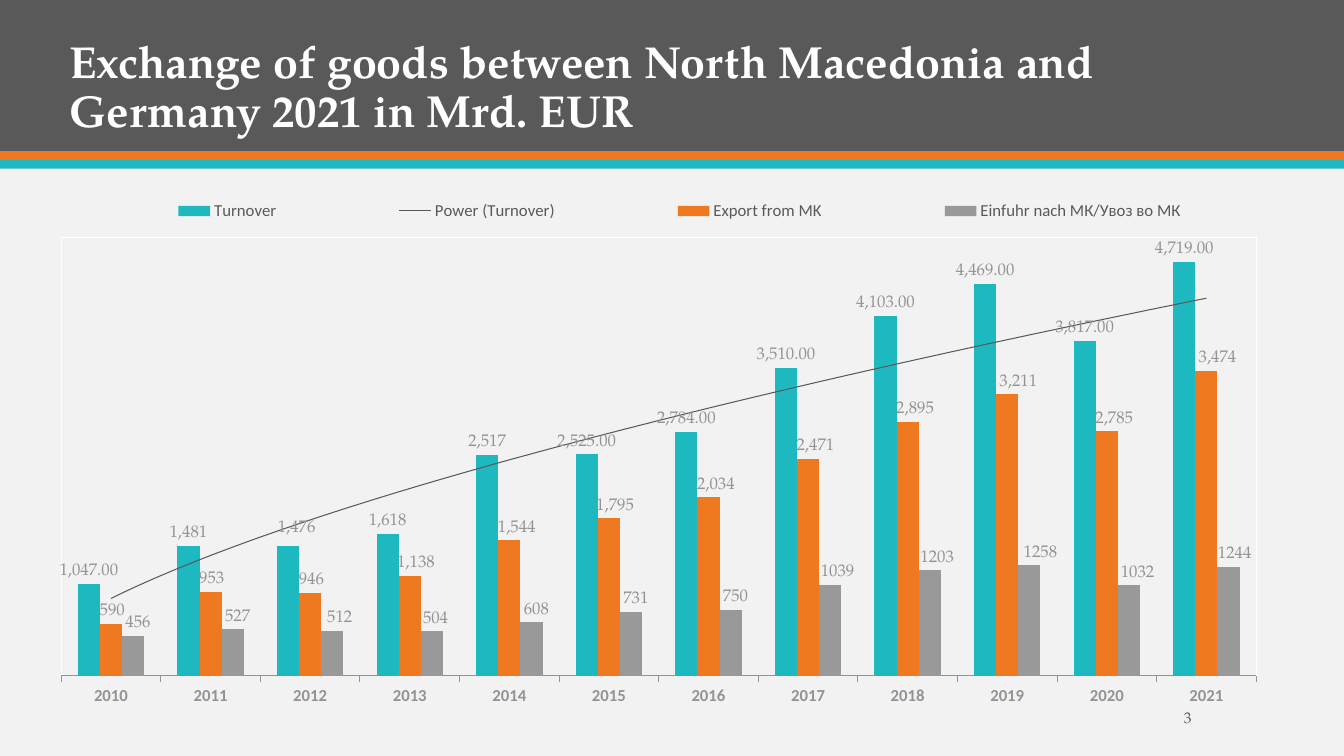
"""Build the slide on the exchange of goods between North Macedonia and Germany."""
from dataclasses import dataclass

from pptx import Presentation
from pptx.chart.data import CategoryChartData
from pptx.dml.color import RGBColor
from pptx.enum import chart as ce, shapes, text
from pptx.oxml import parse_xml
from pptx.oxml.ns import nsdecls, qn
from pptx.util import Cm, Pt

TITLE = "Exchange of goods between North Macedonia and Germany 2021 in Mrd. EUR"
PAGE = "3"
YEARS = [str(year) for year in range(2010, 2022)]
TURNOVER = dict(
    name="Turnover", color="1EB8C1", fmt="#,##0.00",
    values=[1047, 1481, 1476, 1618, 2517, 2525, 2784, 3510, 4103, 4469, 3817, 4719],
    texts={1: "1,481", 2: "1,476", 3: "1,618", 4: "2,517"},
    shifts={2: (0.7, -1)})
EXPORT = dict(
    name="Export from MK", color="EF7920", fmt="#,##0",
    values=[590, 953, 946, 1138, 1544, 1795, 2034, 2471, 2895, 3211, 2785, 3474],
    texts={4: "1,544"},
    shifts={i: (x, 0) for i, x in enumerate(
        [0.1, 0.1, 0.1, 0.5, 0.6, 0.5, 0.6, 0.6, 0.6, 0.9, 0.6, 0.9])})
IMPORT = dict(
    name="Einfuhr nach MК/Увоз во МК", color="999999", fmt="0",
    values=[456, 527, 512, 504, 608, 731, 750, 1039, 1203, 1258, 1032, 1244],
    texts={},
    shifts={i: (x, 0) for i, x in enumerate(
        [0.4, 0.4, 0.6, 0.3, 0.4, 0.4, 0.4, 0.6, 0.6, 0.9, 0.7, 0.5])})
FLOWS = [TURNOVER, EXPORT, IMPORT]


@dataclass(frozen=True)
class Theme:
    serif: str = "TeX Gyre Pagella"
    sans: str = "Calibri"
    white: str = "FFFFFF"
    back: str = "F2F2F2"
    dark: str = "595959"
    orange: str = "EF7920"
    teal: str = "1EB8C1"
    muted: str = "939393"
    title: int = 32
    chart: int = 18
    label: int = 12
    page: int = 11


T = Theme()
WIDTH, HEIGHT = 33.87, 19.05
BANDS = [(T.dark, 3.81), (T.orange, 0.22), (T.teal, 0.22)]


def rgb(color):
    return RGBColor.from_string(color)


def set_font(font, size, color, name=T.serif, bold=False):
    font.size, font.name, font.bold = Pt(size), name, bold
    font.color.rgb = rgb(color)


def write(tf, content, align=text.PP_ALIGN.LEFT, spacing=None, **style):
    p = tf.paragraphs[0]
    p.alignment, p.line_spacing = align, spacing
    r = p.add_run()
    r.text = content
    set_font(r.font, **style)


def chart_xml(tag, body):
    return parse_xml(f"<c:{tag} {nsdecls('c', 'a')}>{body}</c:{tag}>")


def layout(**settings):
    items = "".join(f'<c:{key} val="{val}"/>' for key, val in settings.items())
    return chart_xml("layout", f"<c:manualLayout>{items}</c:manualLayout>")


def replace_layout(parent, anchor, new):
    for old in parent.findall(qn("c:layout")):
        parent.remove(old)
    if anchor is None:
        parent.insert(0, new)
    else:
        anchor.addnext(new)


def add_bands(slide):
    top = 0
    for color, height in BANDS:
        sp = slide.shapes.add_shape(shapes.MSO_SHAPE.RECTANGLE, 0, Cm(top), Cm(WIDTH), Cm(height))
        sp.shadow.inherit = False
        sp.fill.solid()
        sp.fill.fore_color.rgb = rgb(color)
        sp.line.fill.background()
        top += height


def label_series(series, flow):
    style = dict(size=T.label, color=T.muted)
    labels = series.data_labels
    labels.show_value = True
    labels.number_format, labels.number_format_is_linked = flow["fmt"], False
    labels.position = ce.XL_LABEL_POSITION.OUTSIDE_END
    set_font(labels.font, **style)
    for i in sorted({*flow["texts"], *flow["shifts"]}):
        label = series.points[i].data_label
        label.position = ce.XL_LABEL_POSITION.OUTSIDE_END
        if i in flow["texts"]:
            write(label.text_frame, flow["texts"][i], align=None, **style)
        else:
            set_font(label.font, **style)
        if i in flow["shifts"]:
            x, y = flow["shifts"][i]
            idx = series._element.xpath(f"c:dLbls/c:dLbl/c:idx[@val='{i}']")[0]
            idx.addnext(layout(x=x / 100, y=y / 100))


def add_trend(series):
    series._element.find(qn("c:dLbls")).addnext(chart_xml(
        "trendline",
        f'<c:spPr><a:ln w="9525"><a:solidFill><a:srgbClr val="{T.dark}"/></a:solidFill></a:ln></c:spPr>'
        '<c:trendlineType val="power"/><c:dispRSqr val="0"/><c:dispEq val="0"/>'))


def format_axes(chart):
    years, amounts = chart.category_axis, chart.value_axis
    years.major_tick_mark = ce.XL_TICK_MARK.OUTSIDE
    years.format.line.color.rgb = rgb(T.muted)
    set_font(years.tick_labels.font, T.label, T.muted, T.sans, bold=True)
    amounts.minimum_scale, amounts.maximum_scale = 0, 5000
    amounts.has_major_gridlines = False
    amounts.tick_labels.number_format = "#,##0.00"
    amounts.tick_labels.number_format_is_linked = False
    amounts.visible = False


def format_frame(chart):
    chart.has_legend = True
    legend = chart.legend
    legend.position = ce.XL_LEGEND_POSITION.TOP
    legend.include_in_layout = False
    set_font(legend.font, T.label, T.dark, T.sans)
    legend_el = legend._element
    replace_layout(legend_el, legend_el.find(qn("c:legendPos")),
                   layout(xMode="edge", yMode="edge", x=0, y=0.01, w=1, h=0.05))
    area = chart._chartSpace.chart.plotArea
    replace_layout(area, None, layout(
        layoutTarget="inner", xMode="edge", yMode="edge", x=0, y=0.085, w=0.966, h=0.83))
    area.append(chart_xml(
        "spPr", f'<a:noFill/><a:ln w="9525"><a:solidFill><a:srgbClr val="{T.white}"/></a:solidFill></a:ln>'))


def add_trade_chart(slide):
    data = CategoryChartData()
    data.categories = YEARS
    for flow in FLOWS:
        data.add_series(flow["name"], flow["values"], flow["fmt"])
    chart = slide.shapes.add_chart(
        ce.XL_CHART_TYPE.COLUMN_CLUSTERED, Cm(1.5), Cm(4.85), Cm(31.22), Cm(13.31), data).chart
    chart.has_title = False
    set_font(chart.font, T.chart, T.dark)
    plot = chart.plots[0]
    plot.gap_width, plot.overlap, plot.vary_by_categories = 150, 0, False
    for series, flow in zip(plot.series, FLOWS):
        series.format.fill.solid()
        series.format.fill.fore_color.rgb = rgb(flow["color"])
        label_series(series, flow)
    add_trend(plot.series[0])
    format_axes(chart)
    format_frame(chart)


def main():
    prs = Presentation()
    prs.slide_width, prs.slide_height = Cm(WIDTH), Cm(HEIGHT)
    slide = prs.slides.add_slide(prs.slide_layouts[5])
    slide.background.fill.solid()
    slide.background.fill.fore_color.rgb = rgb(T.back)
    add_bands(slide)

    title = slide.shapes.title
    slide.shapes._spTree.append(title._element)
    title.left, title.top, title.width, title.height = Cm(1.5), Cm(0.71), Cm(30.96), Cm(2.87)
    title.text_frame.vertical_anchor = text.MSO_ANCHOR.BOTTOM
    write(title.text_frame, TITLE, spacing=0.9, size=T.title, color=T.white, bold=True)

    add_trade_chart(slide)
    page = slide.shapes.add_textbox(Cm(26.47), Cm(17.7), Cm(3.81), Cm(0.76)).text_frame
    page.word_wrap = True
    page.vertical_anchor = text.MSO_ANCHOR.MIDDLE
    write(page, PAGE, align=text.PP_ALIGN.RIGHT, size=T.page, color=T.dark)
    prs.save("out.pptx")


if __name__ == "__main__":
    main()
